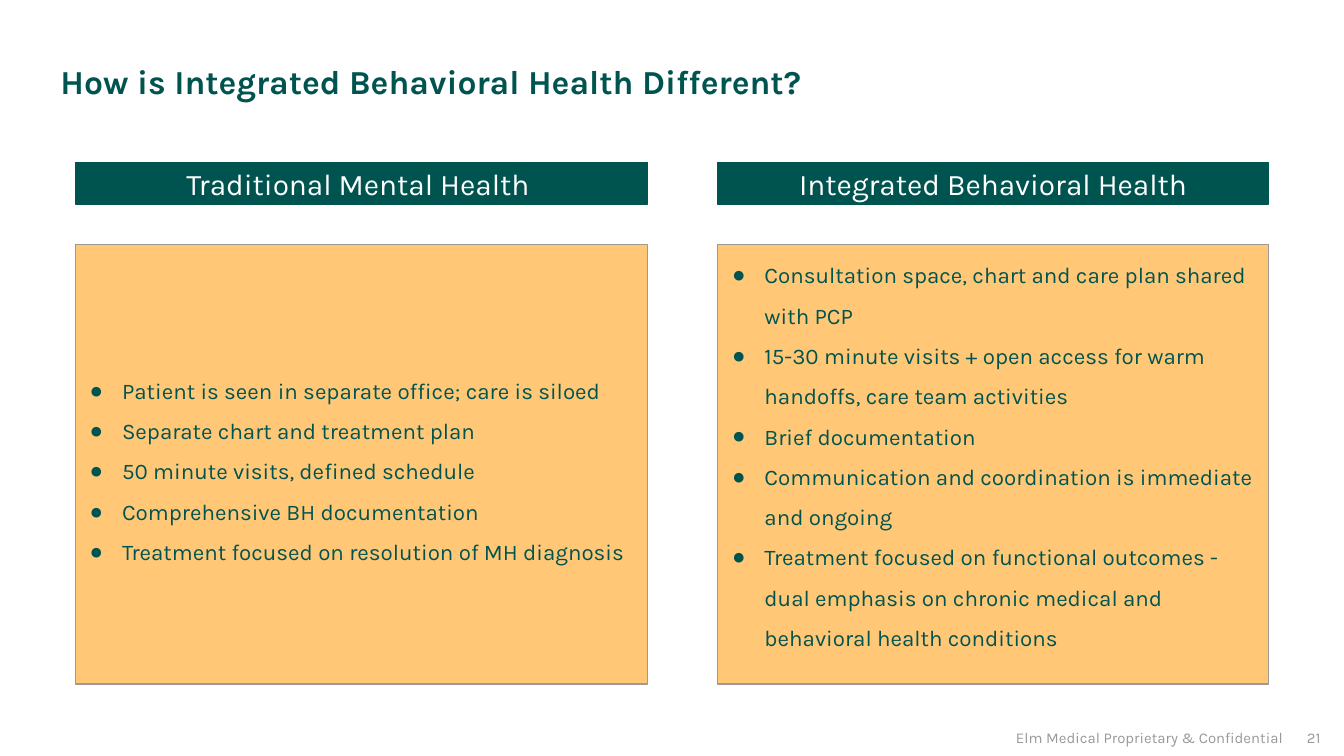
from lxml import etree
from pptx import Presentation
from pptx.dml.color import RGBColor
from pptx.enum.shapes import MSO_SHAPE
from pptx.enum.text import MSO_ANCHOR, PP_ALIGN
from pptx.oxml.ns import qn
from pptx.util import Inches, Pt

RECTANGLE = MSO_SHAPE.RECTANGLE
MIDDLE = MSO_ANCHOR.MIDDLE
LEFT, CENTER = PP_ALIGN.LEFT, PP_ALIGN.CENTER

GREEN = RGBColor(0x00, 0x54, 0x50)
ORANGE = RGBColor(0xFF, 0xC7, 0x76)
TAUPE = RGBColor(0xA0, 0x98, 0x93)
GRAY = RGBColor(0x99, 0x99, 0x99)
WHITE = RGBColor(0xFF, 0xFF, 0xFF)

FONT = "Karla"
BULLET_FONT = "Arial"
TITLE_ONLY = 5
HEADING_HEIGHT = 0.31
HEADING_GAP = 0.3

COLUMNS = [
    {
        "left": 0.56,
        "width": 4.26,
        "heading": "Traditional Mental Health ",
        "items": [
            "Patient is seen in separate office; care is siloed",
            "Separate chart and treatment plan",
            "50 minute visits, defined schedule",
            "Comprehensive BH documentation",
            "Treatment focused on resolution of MH diagnosis",
        ],
        "bottom_inset": 0.1,
    },
    {
        "left": 5.34,
        "width": 4.1,
        "heading": "Integrated Behavioral Health",
        "items": [
            "Consultation space, chart and care plan shared with PCP",
            "15-30 minute visits + open access for warm handoffs, care team activities",
            "Brief documentation",
            "Communication and coordination is immediate and ongoing",
            "Treatment focused on functional outcomes - dual emphasis on "
            "chronic medical and behavioral health conditions",
        ],
        "bottom_inset": 0.32,
    },
]


def add_bullet(paragraph):
    """Give a paragraph a hanging green bullet."""
    properties = paragraph._p.get_or_add_pPr()
    properties.set("marL", str(Inches(0.25)))
    properties.set("indent", str(Inches(-0.24)))
    color = etree.SubElement(properties, qn("a:buClr"))
    etree.SubElement(color, qn("a:srgbClr"), val=str(GREEN))
    etree.SubElement(properties, qn("a:buFont"), typeface=BULLET_FONT)
    etree.SubElement(properties, qn("a:buChar"), char="●")


def write_text(shape, lines, size, color, bold=False, align=LEFT, spacing=1.0,
               bullets=False, insets=(0.1, 0.1, 0.1, 0.1)):
    """Fill a shape with formatted paragraphs; insets run left, top, right, bottom."""
    frame = shape.text_frame
    frame.word_wrap = True
    frame.vertical_anchor = MIDDLE
    (frame.margin_left, frame.margin_top,
     frame.margin_right, frame.margin_bottom) = map(Inches, insets)
    for index, line in enumerate(lines):
        paragraph = frame.add_paragraph() if index else frame.paragraphs[0]
        paragraph.alignment = align
        paragraph.line_spacing = spacing
        if bullets:
            add_bullet(paragraph)
        run = paragraph.add_run()
        run.text = line
        run.font.name = FONT
        run.font.size = Pt(size)
        run.font.bold = bold
        run.font.color.rgb = color


def add_panel(slide, left, top, width, height, fill, line):
    """Add a filled rectangle with a thin outline."""
    shape = slide.shapes.add_shape(
        RECTANGLE, Inches(left), Inches(top), Inches(width), Inches(height))
    shape.shadow.inherit = False
    shape.fill.solid()
    shape.fill.fore_color.rgb = fill
    shape.line.color.rgb = line
    shape.line.width = Pt(0.75)
    return shape


def add_title(slide, left, top, width, height, text):
    """Place and format the title placeholder."""
    title = slide.shapes.title
    title.left, title.top = Inches(left), Inches(top)
    title.width, title.height = Inches(width), Inches(height)
    write_text(title, [text], 18, GREEN, bold=True)


def add_column(slide, left, top, width, height, heading, items, bottom_inset):
    """Add a heading bar above a panel of bullets."""
    bar = add_panel(slide, left, top, width, HEADING_HEIGHT, GREEN, GREEN)
    write_text(bar, [heading], 16, WHITE, align=CENTER)
    offset = HEADING_HEIGHT + HEADING_GAP
    panel = add_panel(slide, left, top + offset, width, height - offset, ORANGE, TAUPE)
    write_text(panel, items, 12, GREEN, spacing=1.5, bullets=True,
               insets=(0.1, 0.1, 0.1, bottom_inset))


def add_footer(slide, left, top, width, height, notice, number):
    """Add the confidentiality notice and the slide number."""
    number_width = 0.45
    parts = [
        (left, 2.4, notice, LEFT),
        (left + width - number_width, number_width, number, CENTER),
    ]
    for part_left, part_width, text, align in parts:
        box = slide.shapes.add_textbox(
            Inches(part_left), Inches(top), Inches(part_width), Inches(height))
        write_text(box, [text], 8, GRAY, align=align, insets=(0.13, 0, 0.13, 0))


def main():
    """Build and save the comparison slide."""
    presentation = Presentation()
    presentation.slide_width = Inches(10)
    presentation.slide_height = Inches(10) * 9 // 16
    slide = presentation.slides.add_slide(presentation.slide_layouts[TITLE_ONLY])
    add_title(slide, 0.35, 0.26, 9.3, 0.68,
              "How is Integrated Behavioral Health Different?")
    for column in COLUMNS:
        add_column(slide, top=1.21, height=3.88, **column)
    add_footer(slide, 7.43, 5.38, 2.57, 0.22,
               "Elm Medical Proprietary & Confidential", "21")
    presentation.save("out.pptx")


if __name__ == "__main__":
    main()
